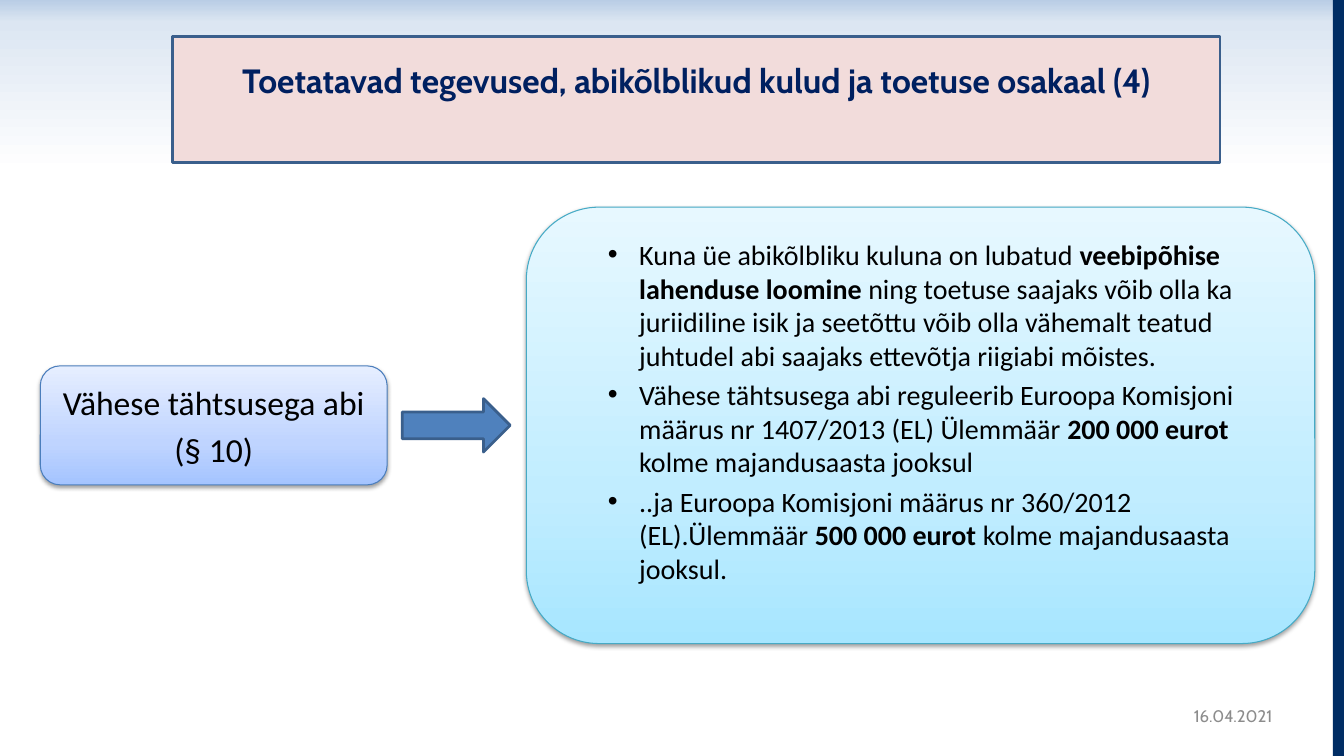
from lxml import etree
from pptx import Presentation
from pptx import util as u
from pptx.dml.color import RGBColor
from pptx.enum import shapes, text
from pptx.oxml import parse_xml
from pptx.oxml.ns import nsdecls, qn

COLORS = {
    "navy": "002D64", "title": "002060", "title_fill": "F2DCDB",
    "outline": "3A5F8C", "arrow": "4F81BD", "text": "000000", "date": "8C8C8C",
    "aid_line": "4B7EBC", "rules_line": "46AAC5",
}
GRADIENTS = {
    "band": [(0, "B9CDE5"), (13, "DCE6F2"), (100, "FFFFFF")],
    "aid": [(0, "A4C4FF"), (35, "BFD4FF"), (100, "E6EEFF")],
    "rules": [(0, "A7E6FF"), (35, "C1EDFF"), (100, "E7F8FF")],
}
KIND = shapes.MSO_SHAPE
ALIGN = text.PP_ALIGN
TITLE = "Toetatavad tegevused, abikõlblikud kulud ja toetuse osakaal (4)"
AID = ["Vähese tähtsusega abi", "(§ 10)"]
# Each rule is a list of runs; every second run is bold.
RULES = [
    ["Kuna üe abikõlbliku kuluna on lubatud ", "veebipõhise lahenduse loomine ",
     "ning toetuse saajaks võib olla ka juriidiline isik ja seetõttu võib olla "
     "vähemalt teatud juhtudel abi saajaks ettevõtja riigiabi mõistes."],
    ["Vähese tähtsusega abi reguleerib Euroopa Komisjoni määrus nr 1407/2013 (EL) "
     "Ülemmäär ", "200 000 eurot ", "kolme majandusaasta jooksul"],
    ["..ja Euroopa Komisjoni määrus nr 360/2012 (EL).Ülemmäär ",
     "500 000 eurot ", "kolme majandusaasta jooksul."],
]


def rgb(name):
    return RGBColor.from_string(COLORS[name])


def place(shape, box):
    shape.left, shape.top, shape.width, shape.height = map(u.Inches, box)


def paint(shape, fill, line=None, width=0.75):
    shape.fill.solid()
    shape.fill.fore_color.rgb = rgb(fill)
    outline(shape, line, width)


def outline(shape, line, width):
    if line:
        shape.line.color.rgb = rgb(line)
        shape.line.width = u.Pt(width)
    else:
        shape.line.fill.background()


def paint_gradient(shape, name, angle, line=None):
    """Fill with a linear gradient; angle runs clockwise in degrees."""
    stops = "".join(
        f'<a:gs pos="{at * 1000}"><a:srgbClr val="{color}"/></a:gs>'
        for at, color in GRADIENTS[name])
    shape.fill.gradient()
    old = shape._element.spPr.find(qn("a:gradFill"))
    old.getparent().replace(old, parse_xml(
        f'<a:gradFill {nsdecls("a")} rotWithShape="1"><a:gsLst>{stops}</a:gsLst>'
        f'<a:lin ang="{angle * 60000}" scaled="0"/></a:gradFill>'))
    outline(shape, line, 0.75)


def add_soft_shadow(shape):
    effects = shape._element.spPr.find(qn("a:effectLst"))
    effects.append(parse_xml(
        f'<a:outerShdw {nsdecls("a")} blurRad="{u.Pt(3.1)}" dist="{u.Pt(1.6)}" '
        'dir="5400000" rotWithShape="0"><a:srgbClr val="000000">'
        '<a:alpha val="38000"/></a:srgbClr></a:outerShdw>'))


def add_block(slide, kind, box):
    block = slide.shapes.add_shape(kind, *map(u.Inches, box))
    block.shadow.inherit = False
    return block


def add_bullet(paragraph):
    props = paragraph._p.get_or_add_pPr()
    props.set("marL", str(u.Inches(0.81)))
    props.set("indent", str(u.Inches(-0.31)))
    etree.SubElement(props, qn("a:buFont")).set("typeface", "Arial")
    etree.SubElement(props, qn("a:buChar")).set("char", "•")


def write(shape, paragraphs, size, color="text", font="Calibri", bold=False,
          align=ALIGN.CENTER, gap=0, bullets=False, bottom=0.05):
    """Write paragraphs, each a list of runs whose every second run is bold."""
    frame = shape.text_frame
    frame.word_wrap = True
    frame.auto_size = text.MSO_AUTO_SIZE.NONE
    frame.vertical_anchor = text.MSO_ANCHOR.MIDDLE
    frame.margin_bottom = u.Inches(bottom)
    for index, runs in enumerate(paragraphs):
        paragraph = frame.add_paragraph() if index else frame.paragraphs[0]
        if bullets:
            add_bullet(paragraph)
        paragraph.alignment = align
        paragraph.space_before = u.Pt(gap if index else 0)
        for position, words in enumerate(runs):
            run = paragraph.add_run()
            run.text = words
            run.font.name, run.font.size = font, u.Pt(size)
            run.font.bold = bold or position % 2 == 1
            run.font.color.rgb = rgb(color)


def add_backdrop(slide, width, height):
    band = add_block(slide, KIND.RECTANGLE, (0, 0, width, 1.7))
    paint_gradient(band, "band", 90)
    slide.shapes._spTree.insert(2, band._element)  # behind the title
    edge = add_block(slide, KIND.RECTANGLE, (width - 0.11, 0, 0.11, height))
    paint(edge, "navy")


def add_title(slide, box):
    title = slide.shapes.title
    place(title, box)
    paint(title, "title_fill", "outline", 2)
    frame = title.text_frame
    frame.margin_left = frame.margin_right = frame.margin_top = 0
    write(title, [[TITLE]], 24, "title", "Cabin", bold=True, bottom=0.38)


def add_panel(slide, box, name, paragraphs, size, **style):
    panel = add_block(slide, KIND.ROUNDED_RECTANGLE, box)
    paint_gradient(panel, name, 270, f"{name}_line")
    add_soft_shadow(panel)
    write(panel, paragraphs, size, **style)


def add_flow(slide, left, middle):
    """Aid panel, arrow and rules panel, all centred on one height."""
    def box(offset, width, height):
        return left + offset, middle - height / 2, width, height

    add_panel(slide, box(0, 3.44, 1.18), "aid", [[line] for line in AID], 24, gap=4.8)
    arrow = add_block(slide, KIND.RIGHT_ARROW, box(3.59, 1.07, 0.53))
    paint(arrow, "arrow", "outline", 2)
    add_panel(slide, box(4.82, 7.82, 4.33), "rules", RULES, 20,
              align=ALIGN.LEFT, gap=4, bullets=True, bottom=0.33)


def add_date(slide, box):
    date = slide.shapes.add_textbox(*map(u.Inches, box))
    write(date, [["16.04.2021"]], 12, "date", "Cabin", align=ALIGN.RIGHT)


def main():
    deck = Presentation()
    deck.slide_width, deck.slide_height = u.Inches(13.33), u.Inches(7.5)
    slide = deck.slides.add_slide(deck.slide_layouts[5])
    add_backdrop(slide, 13.33, 7.5)
    add_title(slide, (1.71, 0.36, 10.39, 1.25))
    add_flow(slide, 0.4, 4.22)
    add_date(slide, (11.29, 6.9, 1.43, 0.4))
    deck.save("out.pptx")


if __name__ == "__main__":
    main()
